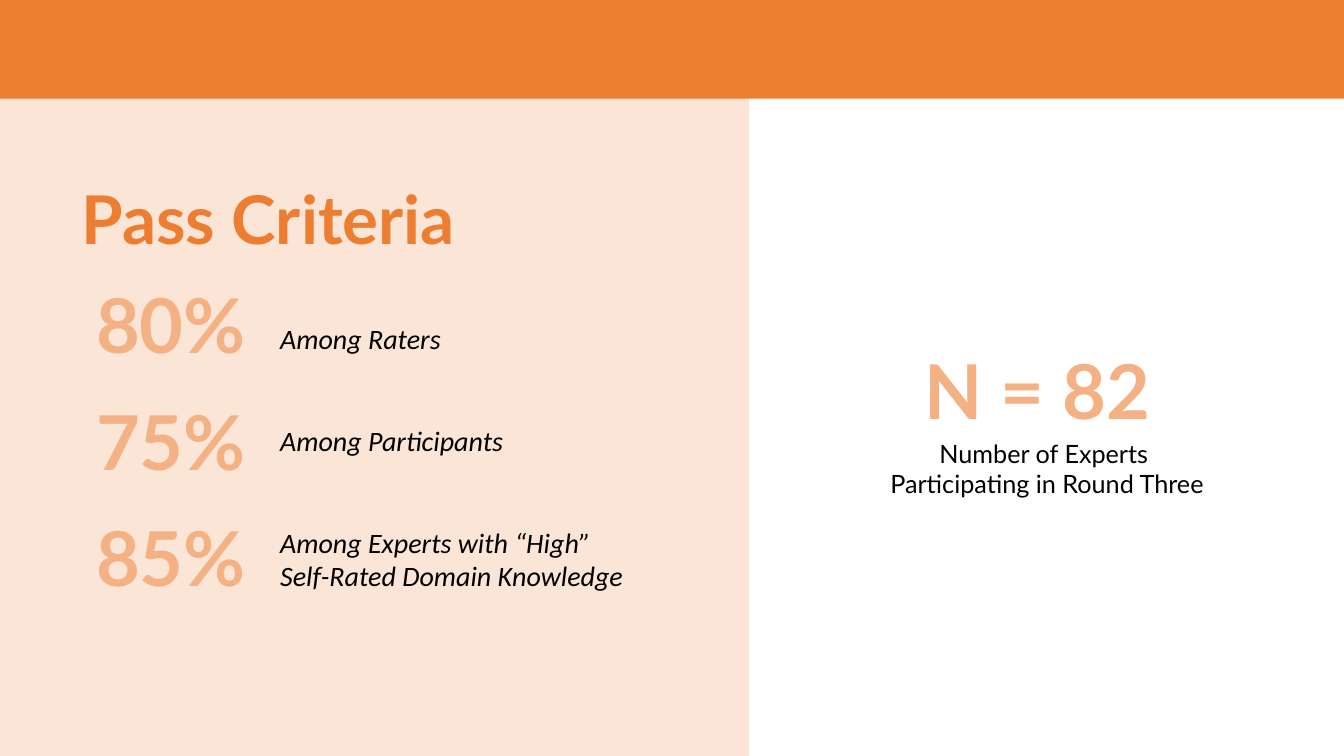
from pptx import Presentation
from pptx.dml.color import RGBColor
from pptx.enum import shapes, text
from pptx.util import Inches, Pt

ORANGE = RGBColor(0xED, 0x7D, 0x31)
LIGHT_ORANGE = RGBColor(0xF4, 0xB1, 0x83)
PALE_ORANGE = RGBColor(0xFB, 0xE5, 0xD6)
BLACK = RGBColor(0, 0, 0)


def format_text(tf, size, color, font="Lato", bold=False, italic=False,
                align=text.PP_ALIGN.CENTER):
    tf.auto_size = text.MSO_AUTO_SIZE.NONE
    tf.vertical_anchor = text.MSO_ANCHOR.TOP
    for p in tf.paragraphs:
        p.alignment = align
        for r in p.runs:
            r.font.name = font
            r.font.size = Pt(size)
            r.font.bold = bold
            r.font.italic = italic
            r.font.color.rgb = color


prs = Presentation()
prs.slide_width = Inches(13.33)
prs.slide_height = Inches(7.5)
slide = prs.slides.add_slide(prs.slide_layouts[5])

panels = [
    (0.97, 7.43, 6.53, PALE_ORANGE),
    (0, 13.33, 0.98, ORANGE),
]
for top, width, height, color in panels:
    sp = slide.shapes.add_shape(shapes.MSO_SHAPE.RECTANGLE, 0, Inches(top),
                                Inches(width), Inches(height))
    sp.shadow.inherit = False
    sp.fill.solid()
    sp.fill.fore_color.rgb = color
    sp.line.fill.background()

title = slide.shapes.title
slide.shapes.element.append(title.element)
title.left, title.top = Inches(0.71), Inches(1.71)
title.width, title.height = Inches(10.27), Inches(0.91)
title.text_frame.text = "Pass Criteria"
format_text(title.text_frame, 48, ORANGE, bold=True, align=text.PP_ALIGN.LEFT)

labels = slide.shapes.add_textbox(Inches(2.68), Inches(3.14), Inches(3.72), Inches(3.13))
tf = labels.text_frame
tf.word_wrap = True
tf.text = "Among Raters\nAmong Participants\nAmong Experts with “High” Self-Rated Domain Knowledge"
format_text(tf, 20, BLACK, font="Calibri", italic=True, align=text.PP_ALIGN.LEFT)
for p in tf.paragraphs[1:]:
    p.space_before = Pt(48.8)

figures = [(0.8, 2.71 + 1.155 * i, 1.79, share)
           for i, share in enumerate(["80%", "75%", "85%"])]
figures.append((8.93, 3.36, 2.9, "N = 82 "))
for left, top, width, figure in figures:
    box = slide.shapes.add_textbox(Inches(left), Inches(top), Inches(width), Inches(1.01))
    box.text_frame.text = figure
    format_text(box.text_frame, 54, LIGHT_ORANGE, bold=True)

caption = slide.shapes.add_textbox(Inches(8.71), Inches(4.3), Inches(3.35), Inches(0.71))
caption.text_frame.text = "Number of Experts \vParticipating in Round Three"
format_text(caption.text_frame, 18, BLACK)

prs.save("out.pptx")
